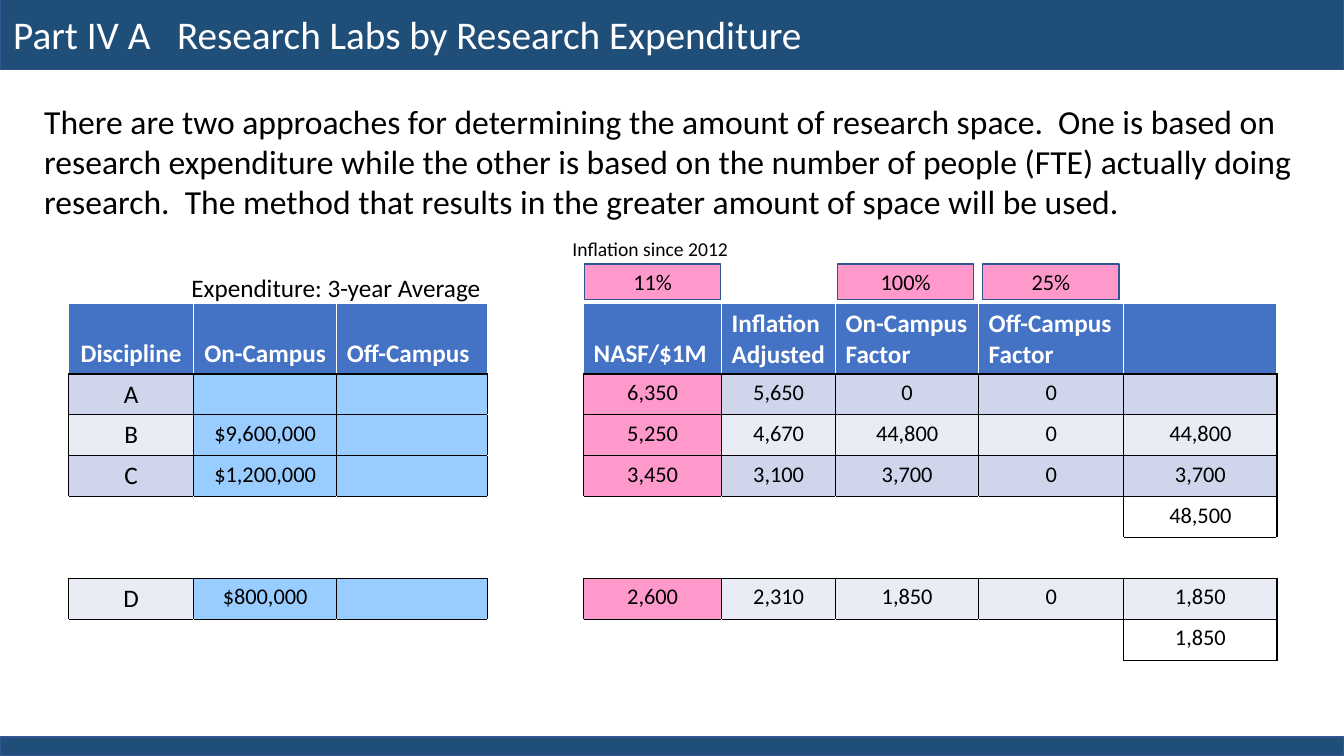
from lxml import etree
from pptx import Presentation
from pptx.dml.color import RGBColor
from pptx.enum.shapes import MSO_SHAPE
from pptx.enum.text import MSO_ANCHOR, MSO_AUTO_SIZE, PP_ALIGN
from pptx.oxml.ns import qn
from pptx.util import Pt

RECTANGLE = MSO_SHAPE.RECTANGLE
TOP, MIDDLE, BOTTOM = MSO_ANCHOR.TOP, MSO_ANCHOR.MIDDLE, MSO_ANCHOR.BOTTOM
LEFT, CENTER = PP_ALIGN.LEFT, PP_ALIGN.CENTER
NO_AUTOFIT = MSO_AUTO_SIZE.NONE
TITLE_ONLY = 5

FONT = "Calibri"
WHITE, BLACK = "FFFFFF", "000000"
NAVY, OUTLINE, HEADER = "1F4E79", "325491", "4472C4"
PINK, BLUE = "FF99CC", "99CCFF"
BANDS = ("E9EBF5", "CFD5EA")

INTRO = (
    "There are two approaches for determining the amount of research space.  "
    "One is based on research expenditure while the other is based on the number "
    "of people (FTE) actually doing research.  The method that results in the "
    "greater amount of space will be used."
)
ROWS = [
    ["Discipline", "On-Campus", "Off-Campus", "", "NASF/$1M", "Inflation Adjusted",
     "On-Campus Factor", "Off-Campus Factor", ""],
    ["A", "", "", "", "6,350", "5,650", "0", "0", ""],
    ["B", "$9,600,000", "", "", "5,250", "4,670", "44,800", "0", "44,800"],
    ["C", "$1,200,000", "", "", "3,450", "3,100", "3,700", "0", "3,700"],
    ["", "", "", "", "", "", "", "", "48,500"],
    [""] * 9,
    ["D", "$800,000", "", "", "2,600", "2,310", "1,850", "0", "1,850"],
    ["", "", "", "", "", "", "", "", "1,850"],
]
COLUMN_WIDTHS = [89.3, 102.2, 108, 68.4, 98.6, 81.4, 102.2, 103.7, 109.4]
HEADER_HEIGHT, ROW_HEIGHT = 50, 29.2
GAP_COLUMN, NASF_COLUMN, TOTAL_COLUMN = 3, 4, 8
INPUT_COLUMNS = (1, 2)


def color(code):
    return RGBColor.from_string(code)


def write(frame, text, size, ink=BLACK, align=LEFT, bold=False):
    frame.text = text
    for para in frame.paragraphs:
        para.alignment = align
        for span in para.runs:
            span.font.name = FONT
            span.font.size = Pt(size)
            span.font.bold = bold
            span.font.color.rgb = color(ink)


def add_box(page, left, top, width, height, fill):
    box = page.shapes.add_shape(RECTANGLE, Pt(left), Pt(top), Pt(width), Pt(height))
    box.shadow.inherit = False
    box.fill.solid()
    box.fill.fore_color.rgb = color(fill)
    box.line.color.rgb = color(OUTLINE)
    box.line.width = Pt(1)
    return box


def add_factor(page, left, text):
    box = add_box(page, left, 188.6, 97.2, 25.2, PINK)
    box.text_frame.vertical_anchor = MIDDLE
    write(box.text_frame, text, 16, align=CENTER)


def add_label(page, left, top, width, height, text, size, wrap=False):
    box = page.shapes.add_textbox(Pt(left), Pt(top), Pt(width), Pt(height))
    box.text_frame.word_wrap = wrap
    write(box.text_frame, text, size)


def add_title(page, text):
    title = page.shapes.title
    title.left, title.top, title.width, title.height = Pt(2.2), Pt(3.6), Pt(590.4), Pt(41)
    title.text_frame.auto_size = NO_AUTOFIT
    title.text_frame.word_wrap = False
    title.text_frame.vertical_anchor = TOP
    write(title.text_frame, text, 28, WHITE)
    for top, height in ((-2.2, 51.8), (526.3, 13.7)):
        band = add_box(page, 0, top, 960, height, NAVY)
        title.element.addprevious(band.element)


def is_boxed(row, column):
    if not (0 < row < len(ROWS) and 0 <= column < len(COLUMN_WIDTHS)):
        return False
    if column == GAP_COLUMN:
        return False
    return bool(ROWS[row][0]) or bool(ROWS[row][column])


def cell_fill(row, column):
    if column == GAP_COLUMN or not ROWS[row][0]:
        return None
    if row == 0:
        return HEADER
    if column in INPUT_COLUMNS:
        return BLUE
    return PINK if column == NASF_COLUMN else BANDS[row % 2]


def set_borders(cell, row, column):
    neighbours = {
        "a:lnL": (row, column - 1),
        "a:lnR": (row, column + 1),
        "a:lnT": (row - 1, column),
        "a:lnB": (row + 1, column),
    }
    properties = cell._tc.get_or_add_tcPr()
    for position, (tag, neighbour) in enumerate(neighbours.items()):
        dark = is_boxed(row, column) or is_boxed(*neighbour)
        line = etree.Element(qn(tag), w=str(Pt(1)))
        fill = etree.SubElement(line, qn("a:solidFill"))
        etree.SubElement(fill, qn("a:srgbClr"), val=BLACK if dark else WHITE)
        properties.insert(position, line)


def format_cell(cell, row, column):
    text = ROWS[row][column]
    if row == 0:
        cell.vertical_anchor = BOTTOM
        align = CENTER if column < 2 else LEFT
        write(cell.text_frame, text, 18, WHITE, align, True)
    else:
        write(cell.text_frame, text, 18 if column == 0 else 16, align=CENTER)
    fill = cell_fill(row, column)
    if fill:
        cell.fill.solid()
        cell.fill.fore_color.rgb = color(fill)
    else:
        cell.fill.background()
    set_borders(cell, row, column)


def add_space_table(page):
    height = HEADER_HEIGHT + ROW_HEIGHT * (len(ROWS) - 1)
    table = page.shapes.add_table(
        len(ROWS), len(COLUMN_WIDTHS), Pt(49), Pt(216.7), Pt(sum(COLUMN_WIDTHS)), Pt(height)
    ).table
    table.first_row = False
    table.horz_banding = False
    for column, width in zip(table.columns, COLUMN_WIDTHS):
        column.width = Pt(width)
    for index, row in enumerate(table.rows):
        row.height = Pt(ROW_HEIGHT if index else HEADER_HEIGHT)
        for column, cell in enumerate(row.cells):
            format_cell(cell, index, column)


def main():
    deck = Presentation()
    deck.slide_width, deck.slide_height = Pt(960), Pt(540)
    page = deck.slides.add_slide(deck.slide_layouts[TITLE_ONLY])
    add_title(page, "Part IV A   Research Labs by Research Expenditure")
    add_label(page, 24.5, 68.4, 918, 94.3, INTRO, 24, wrap=True)
    add_space_table(page)
    for left, text in ((417.6, "11%"), (598.3, "100%"), (702, "25%")):
        add_factor(page, left, text)
    add_label(page, 401.8, 165.6, 126.7, 24.5, "Inflation since 2012", 14)
    add_label(page, 129.6, 190.8, 222.5, 28.8, "Expenditure: 3-year Average", 18)
    deck.save("out.pptx")


if __name__ == "__main__":
    main()
